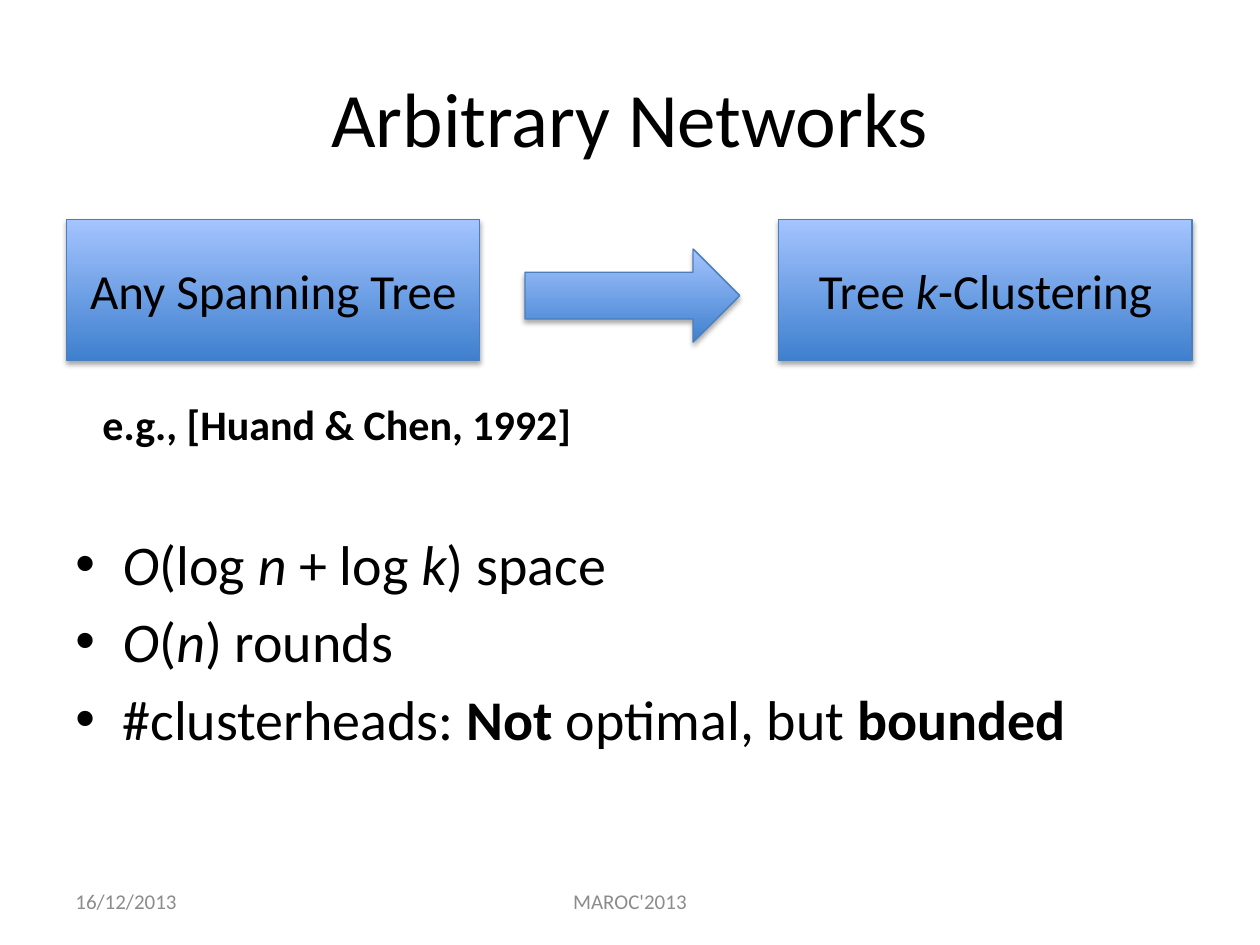
from lxml.etree import SubElement
from pptx import Presentation
from pptx.dml.color import RGBColor
from pptx.enum.shapes import MSO_SHAPE
from pptx.enum.text import MSO_ANCHOR, PP_ALIGN
from pptx.oxml.ns import qn
from pptx.util import Pt

FONT = "Calibri"
BLACK, GREY = "000000", "8C8C8C"
DARK_BLUE, LIGHT_BLUE, EDGE_BLUE = "3F80CE", "A4C4FF", "4B7EBC"
PLAIN, ITALIC, BOLD = "plain", "italic", "bold"


def colour(code):
    """Turn a hex string into a colour."""
    return RGBColor.from_string(code)


def add_spans(para, spans, size, code=BLACK, align=PP_ALIGN.LEFT):
    """Add styled (text, style) runs to a paragraph."""
    para.alignment = align
    for text, style in spans:
        span = para.add_run()
        span.text = text
        span.font.name = FONT
        span.font.size = Pt(size)
        span.font.color.rgb = colour(code)
        span.font.italic = style == ITALIC
        span.font.bold = style == BOLD


def add_text_box(page, left, top, width, height, anchor=MSO_ANCHOR.MIDDLE, wrap=True):
    """Add an empty text box and return its text frame."""
    box = page.shapes.add_textbox(Pt(left), Pt(top), Pt(width), Pt(height))
    frame = box.text_frame
    frame.word_wrap = wrap
    frame.vertical_anchor = anchor
    return frame


def add_bullet(para, spans, size):
    """Fill a paragraph as a bulleted line with a hanging indent."""
    add_spans(para, spans, size)
    para.space_before = Pt(6)
    properties = para._p.get_or_add_pPr()
    properties.set("marL", str(Pt(27)))
    properties.set("indent", str(-Pt(27)))
    SubElement(properties, qn("a:buFont"), typeface="Arial")
    SubElement(properties, qn("a:buChar"), char="•")


def add_shadow(shape):
    """Give a shape a soft shadow straight below it."""
    shape.shadow.inherit = False
    effects = shape._element.spPr.find(qn("a:effectLst"))
    shadow = SubElement(effects, qn("a:outerShdw"), blurRad=str(Pt(3.1)),
                        dist=str(Pt(1.8)), dir="5400000", rotWithShape="0")
    black = SubElement(shadow, qn("a:srgbClr"), val=BLACK)
    SubElement(black, qn("a:alpha"), val="35000")


def add_block(page, kind, left, top, width, height, spans=()):
    """Add a shaded blue shape with centred text."""
    block = page.shapes.add_shape(kind, Pt(left), Pt(top), Pt(width), Pt(height))
    block.fill.gradient()
    block.fill.gradient_angle = 90
    for stop, code in zip(block.fill.gradient_stops, (DARK_BLUE, LIGHT_BLUE)):
        stop.color.rgb = colour(code)
        stop.position = 0 if code == DARK_BLUE else 1
    block.line.color.rgb = colour(EDGE_BLUE)
    block.line.width = Pt(0.75)
    add_shadow(block)
    block.text_frame.word_wrap = True
    block.text_frame.vertical_anchor = MSO_ANCHOR.MIDDLE
    add_spans(block.text_frame.paragraphs[0], spans, 28, align=PP_ALIGN.CENTER)


def add_bullets(page, lines):
    """Add the list of results."""
    frame = add_text_box(page, 36, 298.8, 648, 183.6, MSO_ANCHOR.TOP)
    for index, spans in enumerate(lines):
        para = frame.add_paragraph() if index else frame.paragraphs[0]
        add_bullet(para, spans, 32)


def main():
    """Build the slide and save it."""
    deck = Presentation()
    deck.slide_width, deck.slide_height = Pt(720), Pt(540)
    page = deck.slides.add_slide(deck.slide_layouts[6])

    title = add_text_box(page, 36, 21.6, 648, 90)
    add_spans(title.paragraphs[0], [("Arbitrary Networks", PLAIN)], 44, align=PP_ALIGN.CENTER)
    date = add_text_box(page, 36, 500.4, 168, 28.8)
    add_spans(date.paragraphs[0], [("16/12/2013", PLAIN)], 12, GREY)
    event = add_text_box(page, 246, 500.4, 228, 28.8)
    add_spans(event.paragraphs[0], [("MAROC'2013", PLAIN)], 12, GREY, PP_ALIGN.CENTER)

    add_bullets(page, [
        [("O", ITALIC), ("(log ", PLAIN), ("n", ITALIC), (" + log ", PLAIN),
         ("k", ITALIC), (") space", PLAIN)],
        [("O", ITALIC), ("(", PLAIN), ("n", ITALIC), (") rounds", PLAIN)],
        [("#clusterheads: ", PLAIN), ("Not", BOLD), (" optimal, but ", PLAIN),
         ("bounded", BOLD)],
    ])

    steps = [
        (38, [("Any Spanning Tree", PLAIN)]),
        (445, [("Tree ", PLAIN), ("k", ITALIC), ("-Clustering", PLAIN)]),
    ]
    for left, spans in steps:
        add_block(page, MSO_SHAPE.RECTANGLE, left, 125.3, 236.2, 80.6, spans)
    add_block(page, MSO_SHAPE.RIGHT_ARROW, 300, 142.3, 122.7, 53.3)

    citation = add_text_box(page, 51.5, 224, 285, 36, MSO_ANCHOR.TOP, wrap=False)
    add_spans(citation.paragraphs[0], [("e.g., [Huand & Chen, 1992]", BOLD)], 24)

    deck.save("out.pptx")


if __name__ == "__main__":
    main()
